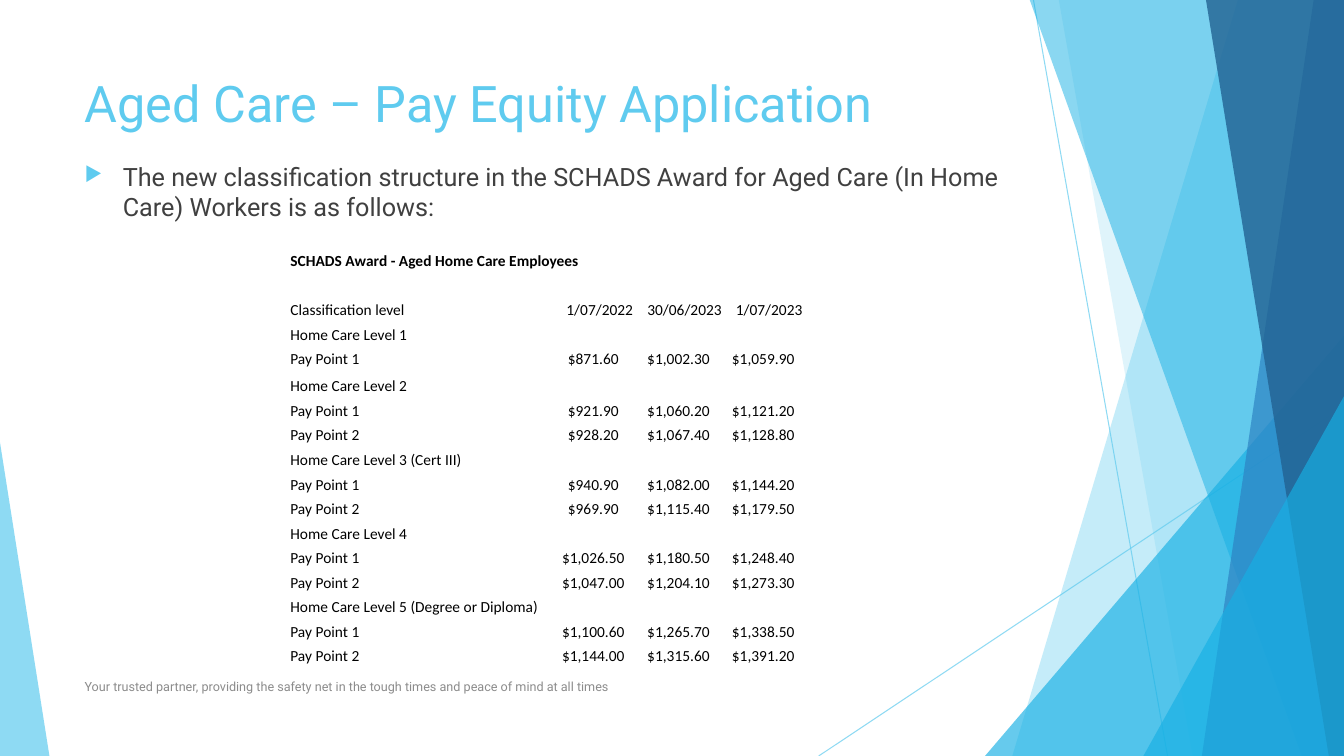
from lxml import etree
from pptx import Presentation
from pptx import util as u
from pptx.dml.color import RGBColor
from pptx.enum import shapes, text
from pptx.oxml.ns import qn

PX = 9144  # 100 px to the inch
WIDTH, HEIGHT = 1333, 750

SKY = RGBColor(0x5F, 0xCB, 0xEF)
CYAN = RGBColor(0x17, 0xB0, 0xE4)
BLUE = RGBColor(0x2E, 0x83, 0xC3)
NAVY = RGBColor(0x22, 0x62, 0x92)
BODY = RGBColor(0x40, 0x40, 0x40)
GREY = RGBColor(0x8C, 0x8C, 0x8C)
BLACK = RGBColor(0, 0, 0)

COLUMNS = (261, 81, 88, 80)
TALL_ROW, TALL_HEIGHT = 5, 27
WIDE_ROWS = (0, 14)  # label spans two columns
HEADER_ROW = 2
PAY_RATES = (
    ("SCHADS Award - Aged Home Care Employees",),
    (),
    ("Classification level", "1/07/2022", "30/06/2023", "1/07/2023"),
    ("Home Care Level 1",),
    ("Pay Point 1", "$871.60", "$1,002.30", "$1,059.90"),
    ("Home Care Level 2",),
    ("Pay Point 1", "$921.90", "$1,060.20", "$1,121.20"),
    ("Pay Point 2", "$928.20", "$1,067.40", "$1,128.80"),
    ("Home Care Level 3 (Cert III)",),
    ("Pay Point 1", "$940.90", "$1,082.00", "$1,144.20"),
    ("Pay Point 2", "$969.90", "$1,115.40", "$1,179.50"),
    ("Home Care Level 4",),
    ("Pay Point 1", "$1,026.50", "$1,180.50", "$1,248.40"),
    ("Pay Point 2", "$1,047.00", "$1,204.10", "$1,273.30"),
    ("Home Care Level 5 (Degree or Diploma)",),
    ("Pay Point 1", "$1,100.60", "$1,265.70", "$1,338.50"),
    ("Pay Point 2", "$1,144.00", "$1,315.60", "$1,391.20"),
)


def px(*lengths):
    return [u.Emu(round(n * PX)) for n in lengths]


def set_alpha(fill_owner, percent):
    """Make the solid colour below an XML element partly transparent."""
    color = next(fill_owner.iter(qn("a:srgbClr")))
    etree.SubElement(color, qn("a:alpha")).set("val", str(percent * 1000))


def paint(sp, color, alpha):
    sp.shadow.inherit = False
    sp.fill.solid()
    sp.fill.fore_color.rgb = color
    sp.line.fill.background()
    set_alpha(sp.fill._xPr.find(qn("a:solidFill")), alpha)


def style_run(r, font, size, color, bold=False):
    r.font.name = font
    r.font.size = u.Pt(size)
    r.font.color.rgb = color
    r.font.bold = bold


def add_thin_line(s, start, end):
    line = s.shapes.add_connector(shapes.MSO_CONNECTOR.STRAIGHT, *px(*start, *end))
    line.line.width = u.Pt(0.75)
    line.line.color.rgb = SKY
    set_alpha(line.line._ln, 70)
    etree.SubElement(line._element.spPr, qn("a:effectLst"))


def add_edge_panel(s, box, top_x, bottom_x, color, alpha):
    """Draw a panel that fills the box to the right of a slanted edge."""
    left, top, width, height = box
    right, bottom = left + width, top + height
    fb = s.shapes.build_freeform(left + top_x, top, scale=PX)
    fb.add_line_segments(
        [(right, top), (right, bottom), (left + bottom_x, bottom)], close=True)
    paint(fb.convert_to_shape(), color, alpha)


def add_corner(s, box, apex, color, alpha):
    sp = s.shapes.add_shape(shapes.MSO_SHAPE.ISOSCELES_TRIANGLE, *px(*box))
    sp.adjustments[0] = apex
    paint(sp, color, alpha)


def add_facets(s, box):
    """Place the overlapping translucent facets, right side first."""
    left, top, width, height = box
    right, bottom = left + width, top + height
    add_thin_line(s, (left + 1025, top), (left + 1158, bottom))
    add_thin_line(s, (right, top + 403), (left + 812, bottom))
    panels = (left, top - 1, width, height + 1)
    add_edge_panel(s, panels, 1228, 1004, SKY, 36)
    add_edge_panel(s, panels, 1050, 1183, SKY, 20)
    add_corner(s, (right - 356, bottom - 417, 356, 417), 1, CYAN, 66)
    add_edge_panel(s, panels, 1021, 1291, CYAN, 50)
    add_edge_panel(s, panels, 1303, 1192, BLUE, 70)
    add_edge_panel(s, panels, 1196, 1318, NAVY, 80)
    add_corner(s, (right - 199, bottom - 357, 199, 357), 1, CYAN, 66)
    add_corner(s, (left, bottom - 311, 49, 311), 0, SKY, 70)


def add_text(s, box, words, size, color, anchor=text.MSO_ANCHOR.TOP):
    tf = s.shapes.add_textbox(*px(*box)).text_frame
    tf.word_wrap = True
    tf.vertical_anchor = anchor
    p = tf.paragraphs[0]
    p.text = words
    style_run(p.runs[0], "Roboto", size, color)
    return p


def add_bullet(p, indent):
    p.space_before = u.Pt(10)
    pPr = p._p.get_or_add_pPr()
    pPr.set("marL", str(indent * PX))
    pPr.set("indent", str(-indent * PX))
    color = etree.SubElement(pPr, qn("a:buClr"))
    etree.SubElement(color, qn("a:srgbClr")).set("val", str(SKY))
    etree.SubElement(pPr, qn("a:buSzPct")).set("val", "80000")
    etree.SubElement(pPr, qn("a:buChar")).set("char", "▶")


def fill_cell(cell, words, align, bold):
    cell.fill.background()
    cell.margin_left, cell.margin_right, cell.margin_top, cell.margin_bottom = px(1, 1, 1, 0)
    cell.vertical_anchor = text.MSO_ANCHOR.BOTTOM
    p = cell.text_frame.paragraphs[0]
    p.alignment = align
    if words:
        p.text = words
        style_run(p.runs[0], "Calibri", 11, BLACK, bold)
    else:
        # Keeps an empty cell from stretching its row
        etree.SubElement(p._p, qn("a:endParaRPr")).set("sz", "1100")


def add_pay_table(s, box):
    height = box[3]
    count = len(PAY_RATES)
    table = s.shapes.add_table(count, len(COLUMNS), *px(*box)).table
    table.first_row = table.horz_banding = False
    for column, width in zip(table.columns, px(*COLUMNS)):
        column.width = width
    row_height = (height - TALL_HEIGHT) / (count - 1)
    for i, values in enumerate(PAY_RATES):
        table.rows[i].height = px(TALL_HEIGHT if i == TALL_ROW else row_height)[0]
        for j in range(len(COLUMNS)):
            if j == 0:
                align = text.PP_ALIGN.LEFT
            elif i == HEADER_ROW:
                align = text.PP_ALIGN.RIGHT
            else:
                align = text.PP_ALIGN.CENTER
            words = values[j] if j < len(values) else ""
            fill_cell(table.cell(i, j), words, align, bold=i == 0)
    for i in WIDE_ROWS:
        table.cell(i, 0).merge(table.cell(i, 1))


def add_pay_slide(prs, box):
    left, top, _, _ = box
    s = prs.slides.add_slide(prs.slide_layouts[6])
    add_facets(s, box)
    margin = left + 74
    add_text(s, (margin, top + 67, 940, 144), "Aged Care – Pay Equity Application", 36, SKY)
    p = add_text(
        s, (margin, top + 155, 940, 505),
        "The new classification structure in the SCHADS Award for Aged Care "
        "(In Home Care) Workers is as follows:", 18, BODY)
    add_bullet(p, 38)
    add_text(
        s, (margin, top + 661, 689, 40),
        "Your trusted partner, providing the safety net in the tough times "
        "and peace of mind at all times", 9, GREY, text.MSO_ANCHOR.MIDDLE)
    add_pay_table(s, (left + 287, top + 244, sum(COLUMNS), 417))


def main():
    prs = Presentation()
    prs.slide_width, prs.slide_height = px(WIDTH, HEIGHT)
    add_pay_slide(prs, (0, 0, WIDTH, HEIGHT))
    prs.save("out.pptx")


if __name__ == "__main__":
    main()
